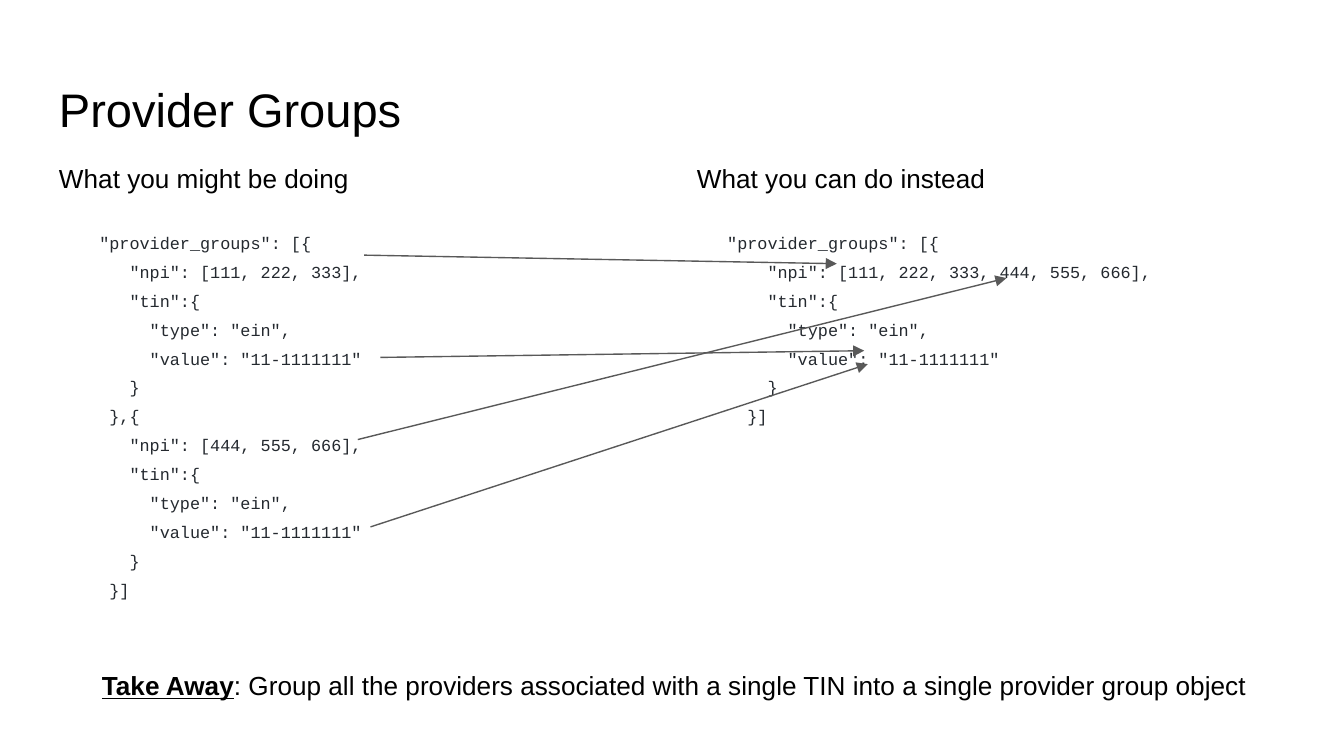
from typing import NamedTuple

from lxml import etree
from pptx import Presentation
from pptx import util as u
from pptx.dml.color import RGBColor
from pptx.enum import shapes, text
from pptx.oxml.ns import qn

COLOURS = {"text": "000000", "code": "24292F", "arrow": "595959"}
INSET = 7.2
CODE_SIZE = 9
CHAR_WIDTH = 5.4  # advance of one Courier New character at 9 pt
HEADING_GAP = 16


class Area(NamedTuple):
    left: float
    top: float
    width: float
    height: float


class CodeLine(NamedTuple):
    indent: int  # in characters
    content: str


class Column(NamedTuple):
    area: Area
    heading: str
    lines: list[CodeLine]


class Arrow(NamedTuple):
    x1: float
    y1: float
    x2: float
    y2: float


def group_lines(npi: str, closing: str) -> list[CodeLine]:
    """The body of one provider group, down to its closing bracket."""
    return [
        CodeLine(7, f'"npi": [{npi}],'),
        CodeLine(7, '"tin":{'),
        CodeLine(9, '"type": "ein",'),
        CodeLine(9, '"value": "11-1111111"'),
        CodeLine(7, "}"),
        CodeLine(5, closing),
    ]


OPENING = '"provider_groups": [{'
COLUMNS = [
    Column(
        Area(24.5, 80, 301.7, 246.2),
        "What you might be doing",
        [CodeLine(4, OPENING)]
        + group_lines("111, 222, 333", "},{")
        + group_lines("444, 555, 666", "}]"),
    ),
    Column(
        Area(366.3, 80, 311.8, 174.2),
        "What you can do instead",
        [CodeLine(3, OPENING)] + group_lines("111, 222, 333, 444, 555, 666", "}]"),
    ),
]
ARROWS = [
    Arrow(195.1, 136.7, 448.3, 141.3),
    Arrow(191.7, 235.5, 539.2, 149),
    Arrow(203.8, 191.5, 463, 187.9),
    Arrow(198.5, 282.3, 464.9, 195.1),
]


def colour(name: str) -> RGBColor:
    return RGBColor.from_string(COLOURS[name])


def set_font(paragraph, size: float, name: str = "Arial", tint: str = "text") -> None:
    paragraph.font.size = u.Pt(size)
    paragraph.font.name = name
    paragraph.font.color.rgb = colour(tint)


def add_box(page, area: Area):
    box = page.shapes.add_textbox(*(u.Pt(value) for value in area))
    frame = box.text_frame
    frame.word_wrap = True
    frame.margin_left = frame.margin_right = u.Pt(INSET)
    frame.margin_top = frame.margin_bottom = u.Pt(INSET)
    return frame


def add_column(page, column: Column) -> None:
    frame = add_box(page, column.area)
    heading = frame.paragraphs[0]
    heading.text = column.heading
    set_font(heading, 14)
    heading.space_after = u.Pt(HEADING_GAP)
    for line in column.lines:
        para = frame.add_paragraph()
        para.text = line.content
        para.line_spacing = 1.43
        set_font(para, CODE_SIZE, "Courier New", "code")
        properties = para._p.get_or_add_pPr()
        properties.set("marL", str(u.Pt(line.indent * CHAR_WIDTH)))
        properties.set("indent", "0")


def add_arrow(page, arrow: Arrow) -> None:
    connector = page.shapes.add_connector(
        shapes.MSO_CONNECTOR.STRAIGHT, *(u.Pt(value) for value in arrow)
    )
    connector.line.color.rgb = colour("arrow")
    connector.line.width = u.Pt(0.75)
    outline = connector.line._get_or_add_ln()
    etree.SubElement(outline, qn("a:tailEnd"), type="triangle", w="med", len="med")
    etree.SubElement(connector._element.spPr, qn("a:effectLst"))


def main() -> None:
    deck = Presentation()
    deck.slide_width, deck.slide_height = u.Pt(720), u.Pt(405)
    page = deck.slides.add_slide(deck.slide_layouts[6])

    # Title
    frame = add_box(page, Area(24.5, 35.3, 671, 45.4))
    frame.vertical_anchor = text.MSO_ANCHOR.BOTTOM
    frame.text = "Provider Groups"
    set_font(frame.paragraphs[0], 25.2)

    # Code before and after grouping
    for column in COLUMNS:
        add_column(page, column)

    # Take away
    takeaway = add_box(page, Area(47.5, 351.4, 643.7, 31.7)).paragraphs[0]
    set_font(takeaway, 14)
    label = takeaway.add_run()
    label.text = "Take Away"
    label.font.bold = label.font.underline = True
    span = takeaway.add_run()
    span.text = (
        ": Group all the providers associated with a single TIN "
        "into a single provider group object"
    )

    # Arrows from each old entry to its merged place
    for arrow in ARROWS:
        add_arrow(page, arrow)

    deck.save("out.pptx")


if __name__ == "__main__":
    main()
